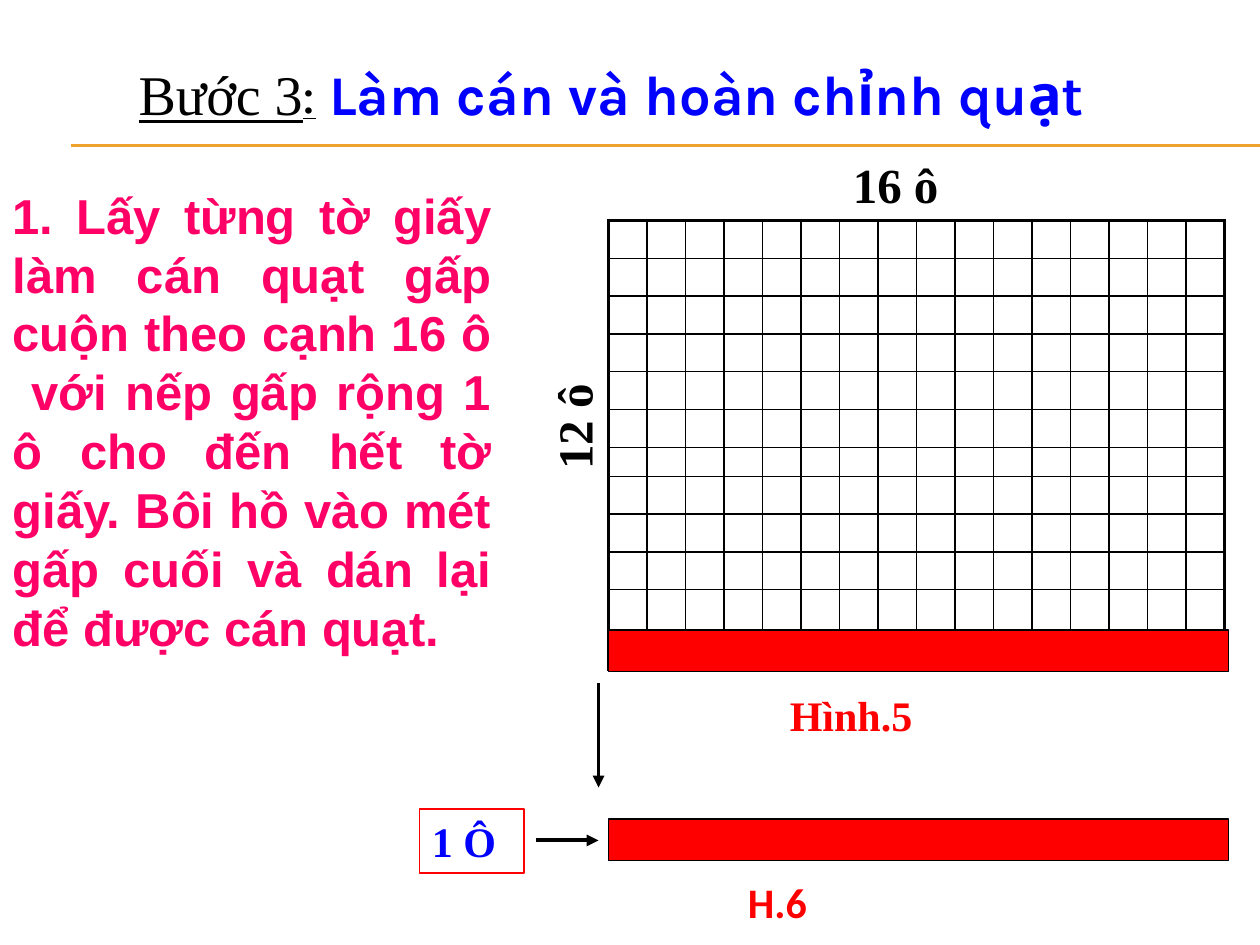
from dataclasses import dataclass

from lxml import etree
from pptx import Presentation
from pptx.dml.color import RGBColor
from pptx.enum.shapes import MSO_CONNECTOR, MSO_SHAPE
from pptx.enum.text import MSO_ANCHOR, MSO_AUTO_SIZE, PP_ALIGN
from pptx.oxml.ns import qn
from pptx.util import Inches, Pt

STRAIGHT = MSO_CONNECTOR.STRAIGHT
RECTANGLE = MSO_SHAPE.RECTANGLE
TOP = MSO_ANCHOR.TOP
NO_AUTOFIT = MSO_AUTO_SIZE.NONE
LEFT, CENTER, JUSTIFY = PP_ALIGN.LEFT, PP_ALIGN.CENTER, PP_ALIGN.JUSTIFY


@dataclass(frozen=True)
class Theme:
    black: str = "000000"
    blue: str = "0000FF"
    red: str = "FF0000"
    pink: str = "FF0066"
    gold: str = "F0A22E"
    serif: str = "Times New Roman"
    sans: str = "Arial"
    heading: str = "Karla"
    caption: str = "Calibri"
    title_size: int = 32
    body_size: int = 28
    label_size: int = 24
    empty_cell_size: int = 8
    thin: float = 0.75
    grid: float = 1
    thick: float = 2.25


def add_run(paragraph, text, *, font, size, color, bold=False, underline=False):
    run = paragraph.add_run()
    run.text = text
    run.font.name = font
    run.font.size = Pt(size)
    run.font.bold = bold
    run.font.underline = underline
    run.font.color.rgb = RGBColor.from_string(color)


class SlideBuilder:
    def __init__(self, slide, theme):
        self.slide = slide
        self.theme = theme

    def set_text(self, shape, runs, align=LEFT):
        frame = shape.text_frame
        frame.word_wrap = True
        frame.auto_size = NO_AUTOFIT
        frame.vertical_anchor = TOP
        paragraph = frame.paragraphs[0]
        paragraph.alignment = align
        paragraph.space_before = Pt(0)
        for text, style in runs:
            add_run(paragraph, text, **style)
        return paragraph

    def placeholder(self, shape, box, runs, align=LEFT):
        shape.left, shape.top, shape.width, shape.height = map(Inches, box)
        paragraph = self.set_text(shape, runs, align)
        properties = paragraph._p.get_or_add_pPr()
        properties.set("marL", "0")
        properties.set("indent", "0")
        etree.SubElement(properties, qn("a:buNone"))

    def label(self, box, text, align=LEFT, rotation=0, **style):
        shape = self.slide.shapes.add_textbox(*map(Inches, box))
        shape.rotation = rotation
        self.set_text(shape, [(text, style)], align)

    def rectangle(self, box, line, fill=None):
        shape = self.slide.shapes.add_shape(RECTANGLE, *map(Inches, box))
        shape.shadow.inherit = False
        if fill:
            shape.fill.solid()
            shape.fill.fore_color.rgb = RGBColor.from_string(fill)
        else:
            shape.fill.background()
        shape.line.color.rgb = RGBColor.from_string(line)
        shape.line.width = Pt(self.theme.thin)
        return shape

    def line(self, start, end, color, width, arrow=False):
        connector = self.slide.shapes.add_connector(
            STRAIGHT, *map(Inches, (*start, *end)))
        connector.line.color.rgb = RGBColor.from_string(color)
        connector.line.width = Pt(width)
        properties = connector._element.spPr
        if arrow:
            etree.SubElement(properties.find(qn("a:ln")), qn("a:tailEnd"), type="triangle")
        etree.SubElement(properties, qn("a:effectLst"))

    def grid(self, box, row_heights, column_count):
        row_count = len(row_heights)
        table = self.slide.shapes.add_table(
            row_count, column_count, *map(Inches, box)).table
        table.first_row = False
        table.horz_banding = False
        for column in table.columns:
            column.width = Inches(box[2] / column_count)
        for row, height in zip(table.rows, row_heights):
            row.height = Inches(height)
        for row in range(row_count):
            for column in range(column_count):
                outer = {"L": column == 0, "R": column == column_count - 1,
                         "T": row == 0, "B": row == row_count - 1}
                self.grid_cell(table.cell(row, column), outer)

    def grid_cell(self, cell, outer):
        cell.margin_top = cell.margin_bottom = 0
        properties = cell._tc.get_or_add_tcPr()
        for side, is_outer in outer.items():
            width = self.theme.thick if is_outer else self.theme.grid
            border = etree.SubElement(properties, qn(f"a:ln{side}"), w=str(Pt(width)))
            fill = etree.SubElement(border, qn("a:solidFill"))
            etree.SubElement(fill, qn("a:srgbClr"), val=self.theme.black)
        cell.fill.background()
        etree.SubElement(cell.text_frame.paragraphs[0]._p, qn("a:endParaRPr"),
                         sz=str(self.theme.empty_cell_size * 100))


def main():
    presentation = Presentation()
    presentation.slide_width = Inches(10)
    presentation.slide_height = Inches(7.5)
    slide = presentation.slides.add_slide(presentation.slide_layouts[1])
    theme = Theme()
    builder = SlideBuilder(slide, theme)

    for height in (1.15, 1.16):
        builder.line((0.56, height), (10, height), theme.gold, theme.thin)

    step = dict(size=theme.title_size, color=theme.black)
    builder.placeholder(slide.shapes.title, (1, 0.42, 8.12, 0.64), [
        ("Bước 3", dict(step, font=theme.serif, underline=True)),
        (":", dict(step, font=theme.heading, underline=True)),
        (" ", dict(step, font=theme.heading)),
        ("Làm cán và hoàn chỉnh quạt",
         dict(step, font=theme.heading, color=theme.blue, bold=True)),
    ])
    instruction = (
        "1. Lấy từng tờ giấy làm cán quạt gấp cuộn theo cạnh 16 ô  với nếp gấp "
        "rộng 1 ô cho đến hết tờ giấy. Bôi hồ vào mét gấp cuối và dán lại để "
        "được cán quạt.")
    builder.placeholder(slide.placeholders[1], (0, 1.42, 4, 3.84), [
        (instruction, dict(font=theme.sans, size=theme.body_size,
                           color=theme.pink, bold=True)),
    ], JUSTIFY)

    row_heights = [0.3] * 6 + [0.23] + [0.3] * 3 + [0.63]
    builder.grid((4.83, 1.75, 4.89, 3.56), row_heights, 16)
    for top in (5, 6.5):
        builder.rectangle((4.83, top, 4.92, 0.33), theme.black, theme.red)
    for start, end in (((4.75, 5.42), (4.75, 6.25)), ((4.25, 6.67), (4.75, 6.67))):
        builder.line(start, end, theme.black, theme.thick, arrow=True)

    dimension = dict(font=theme.serif, size=theme.body_size, color=theme.black, bold=True)
    builder.label((6.67, 1.18, 1.42, 0.57), "16 ô", **dimension)
    builder.label((4.09, 3.08, 0.92, 0.57), "12 ô", rotation=270, **dimension)

    caption = dict(font=theme.serif, size=theme.label_size, color=theme.red, bold=True)
    unit_box = builder.rectangle((3.33, 6.42, 0.83, 0.51), theme.red)
    builder.set_text(unit_box, [("1 Ô", dict(caption, color=theme.blue))])
    builder.label((6.17, 5.42, 1.25, 0.5), "Hình.5", **caption)
    builder.label((5.67, 6.91, 1, 0.5), "H.6", CENTER, **dict(caption, font=theme.caption))

    presentation.save("out.pptx")


if __name__ == "__main__":
    main()
